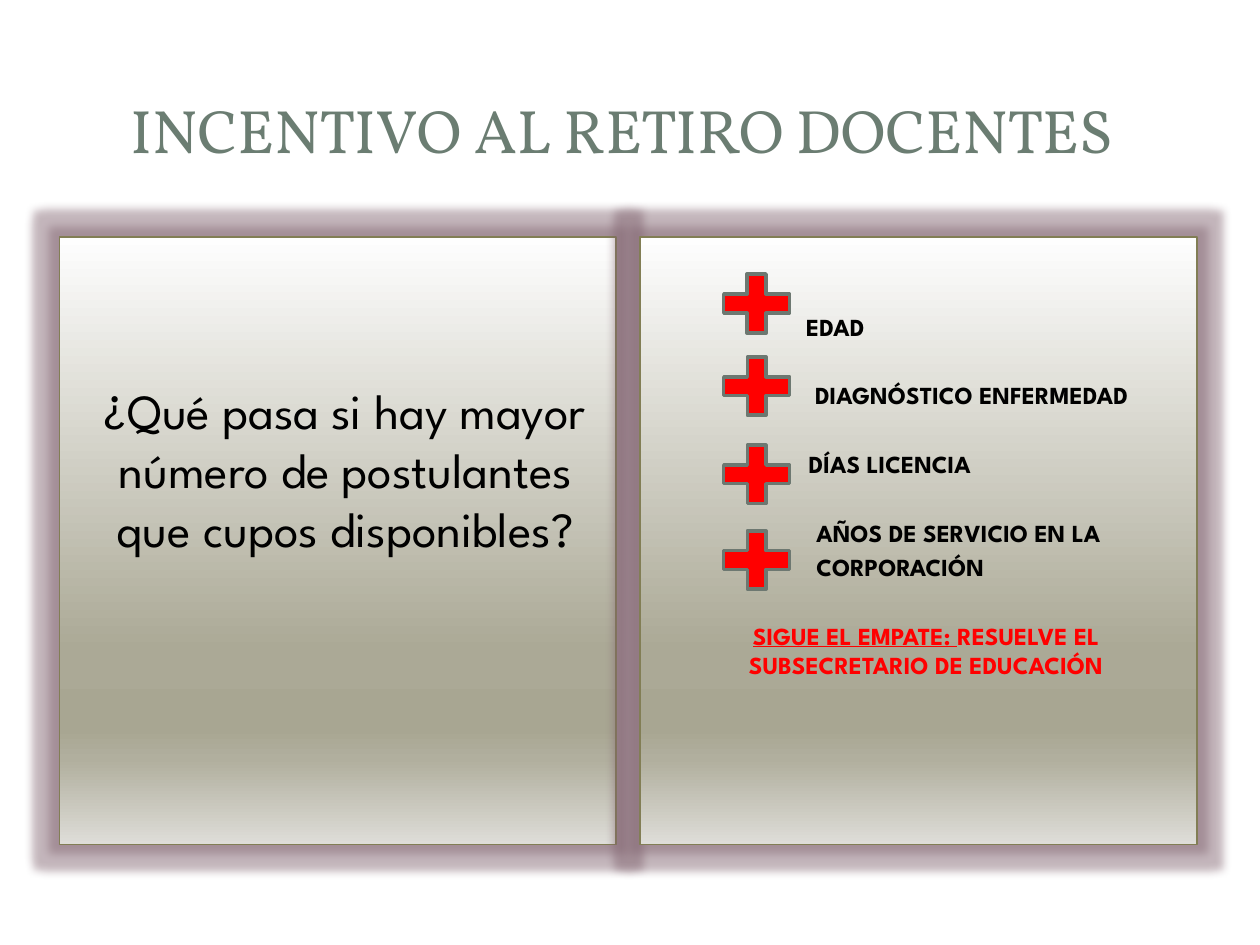
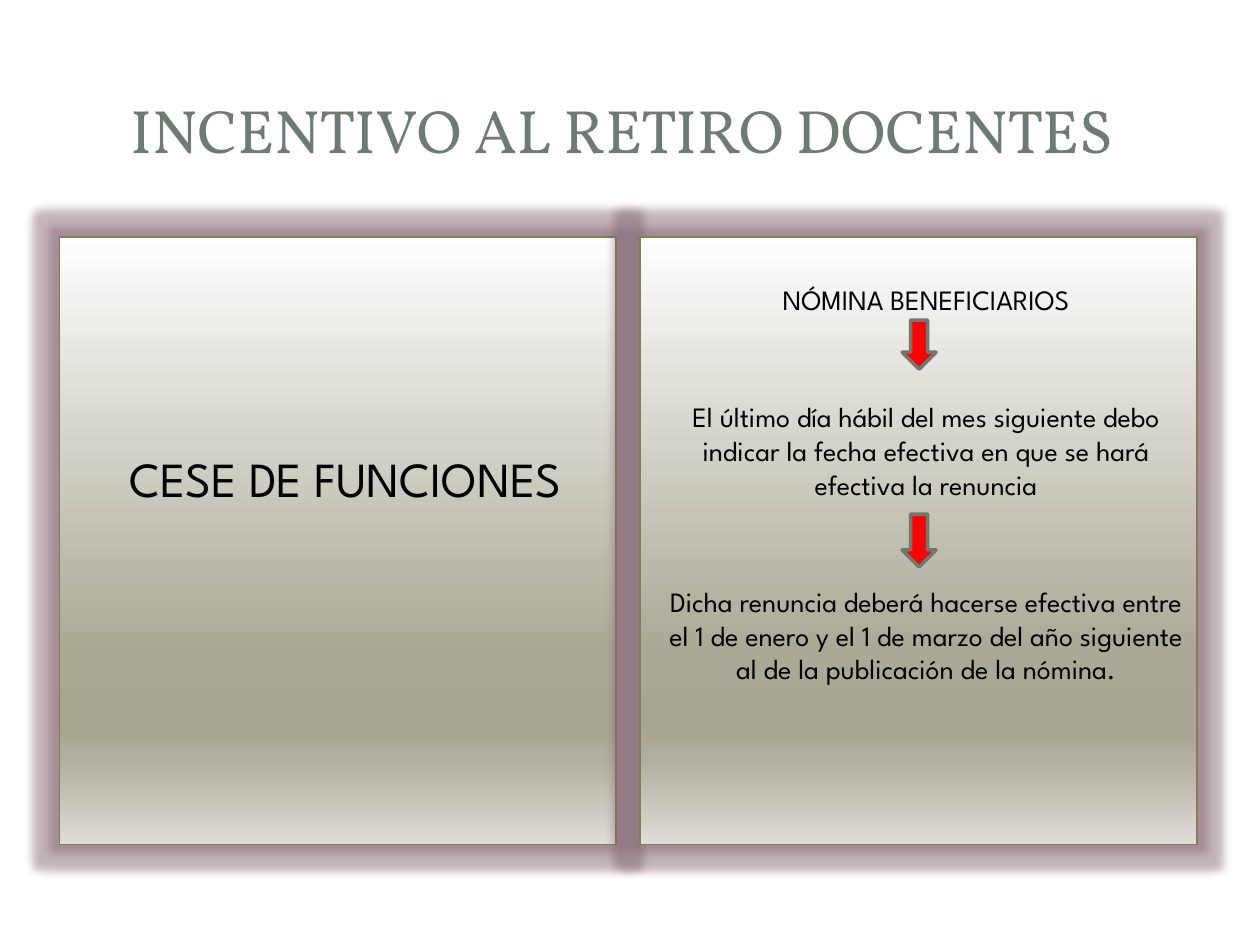
from dataclasses import dataclass

from lxml.etree import SubElement
from pptx import Presentation
from pptx.dml.color import RGBColor
from pptx.enum.shapes import MSO_SHAPE
from pptx.enum.text import MSO_ANCHOR, MSO_AUTO_SIZE, PP_ALIGN
from pptx.oxml.ns import qn
from pptx.util import Inches, Pt


@dataclass(frozen=True)
class Theme:
    head: str = "Vollkorn"
    body: str = "League Spartan"
    title: str = "6B7D72"
    ink: str = "000000"
    red: str = "FF0000"
    edge: str = "827E55"
    rim: str = "6D7871"
    glow: str = "7D5F6B"
    fade: tuple = ((0, "FEFEFE"), (68, "ABA996"), (81, "A8A692"),
                   (86, "B1AF9E"), (100, "DEDDD8"))
    top: int = 35
    big: int = 28
    mid: int = 16
    small: int = 14


LOOK = Theme()
TITLE = "INCENTIVO AL RETIRO DOCENTES"
LEFTS = (0.47, 5.08)
TOP, WIDE, HIGH = 1.88, 4.42, 4.82
PAD, INDENT = 0.05, 0.12
LINE, GAP = 1.2, 0.2


def para(text, skip=0, indent=None):
    return {"runs": [(text, {})], "skip": skip, "indent": indent}


CRITERIA = [
    para("EDAD", 2, 1.22),
    para("DIAGNÓSTICO ENFERMEDAD", 1, 1.29),
    para("DÍAS LICENCIA", 1, 1.24),
    para("AÑOS DE SERVICIO EN LA", 1, 1.3),
    para("CORPORACIÓN", 0, 1.3),
    {"runs": [("SIGUE EL EMPATE: ", {"color": LOOK.red, "under": True}),
              ("RESUELVE EL SUBSECRETARIO DE EDUCACIÓN", {"color": LOOK.red})],
     "skip": 1, "indent": None},
]
STEPS = [
    para("NÓMINA BENEFICIARIOS", 1),
    para("El último día hábil del mes siguiente debo indicar la fecha "
         "efectiva en que se hará efectiva la renuncia", 2),
    para("Dicha renuncia deberá hacerse efectiva entre el 1 de enero y el "
         "1 de marzo del año siguiente al de la publicación de la nómina.", 2),
]
SLIDES = [
    {"panels": [
        ([para("¿Qué pasa si hay mayor número de postulantes que cupos "
               "disponibles?", 2)], LOOK.big, False),
        (CRITERIA, LOOK.small, True)],
     "mark": MSO_SHAPE.MATH_PLUS, "left": 5.65, "width": 0.71,
     "spots": [(2.09, 0.64), (2.75, 0.63), (3.45, 0.63), (4.13, 0.63)]},
    {"panels": [
        ([para("CESE DE FUNCIONES", 3)], LOOK.big, False),
        (STEPS, LOOK.mid, False)],
     "mark": MSO_SHAPE.DOWN_ARROW, "left": 7.16, "width": 0.27,
     "spots": [(2.54, 0.39), (4.08, 0.42)]},
]


def add_run(line, text, size, font, color, bold=False, under=False):
    run = line.add_run()
    run.text = text
    face = run.font
    face.name, face.size, face.bold = font, Pt(size), bold
    face.underline = under
    face.color.rgb = RGBColor.from_string(color)


def add_shape(slide, kind, left, top, width, height, edge, weight):
    shape = slide.shapes.add_shape(
        kind, Inches(left), Inches(top), Inches(width), Inches(height))
    shape.shadow.inherit = False
    shape.line.color.rgb = RGBColor.from_string(edge)
    shape.line.width = Pt(weight)
    return shape


def add_color(parent, color, alpha=None):
    node = SubElement(parent, qn("a:srgbClr"), val=color)
    if alpha:
        SubElement(node, qn("a:alpha"), val=str(alpha * 1000))


def add_fade(shape):
    shape.fill.gradient()
    shape.fill.gradient_angle = 270
    props = shape._element.spPr
    stops = props.find(qn("a:gradFill")).find(qn("a:gsLst"))
    for stop in list(stops):
        stops.remove(stop)
    for place, color in LOOK.fade:
        add_color(SubElement(stops, qn("a:gs"), pos=str(place * 1000)), color)
    glow = SubElement(props.find(qn("a:effectLst")), qn("a:glow"),
                      rad=str(Inches(0.14)))
    add_color(glow, LOOK.glow, 45)


def add_panel(slide, left, paras, size, bold):
    shape = add_shape(slide, MSO_SHAPE.RECTANGLE, left, TOP, WIDE, HIGH,
                      LOOK.edge, 0.75)
    add_fade(shape)
    frame = shape.text_frame
    frame.word_wrap = True
    frame.vertical_anchor = MSO_ANCHOR.TOP
    pitch = size * (LINE + GAP)
    for index, item in enumerate(paras):
        line = frame.add_paragraph() if index else frame.paragraphs[0]
        lead = item["skip"] * pitch
        if index == 0:
            frame.margin_top = Inches(PAD) + Pt(lead)
            lead = 0
        line.space_before = Pt(lead + size * GAP)
        indent = item["indent"]
        line.alignment = PP_ALIGN.LEFT if indent else PP_ALIGN.CENTER
        props = line._p.get_or_add_pPr()
        props.set("marL", str(Inches(indent or INDENT)))
        props.set("indent", "0")
        for text, style in item["runs"]:
            add_run(line, text, size, LOOK.body, **{"color": LOOK.ink,
                                                    "bold": bold, **style})


def add_mark(slide, kind, left, top, width, height):
    shape = add_shape(slide, kind, left, top, width, height, LOOK.rim, 2)
    shape.fill.solid()
    shape.fill.fore_color.rgb = RGBColor.from_string(LOOK.red)
    SubElement(shape._element.spPr.find(qn("a:ln")), qn("a:round"))


def add_title(slide):
    title = slide.shapes.title
    title.left, title.top = Inches(0.42), Inches(0.45)
    title.width, title.height = Inches(9.03), Inches(1.14)
    frame = title.text_frame
    frame.word_wrap = True
    frame.auto_size = MSO_AUTO_SIZE.NONE
    frame.vertical_anchor = MSO_ANCHOR.MIDDLE
    line = frame.paragraphs[0]
    line.alignment = PP_ALIGN.CENTER
    add_run(line, TITLE, LOOK.top, LOOK.head, LOOK.title)


def main():
    deck = Presentation()
    deck.slide_width, deck.slide_height = Inches(10), Inches(7.5)
    for page in SLIDES:
        slide = deck.slides.add_slide(deck.slide_layouts[5])
        add_title(slide)
        for left, panel in zip(LEFTS, page["panels"]):
            add_panel(slide, left, *panel)
        for top, height in page["spots"]:
            add_mark(slide, page["mark"], page["left"], top,
                     page["width"], height)
    deck.save("out.pptx")


if __name__ == "__main__":
    main()
